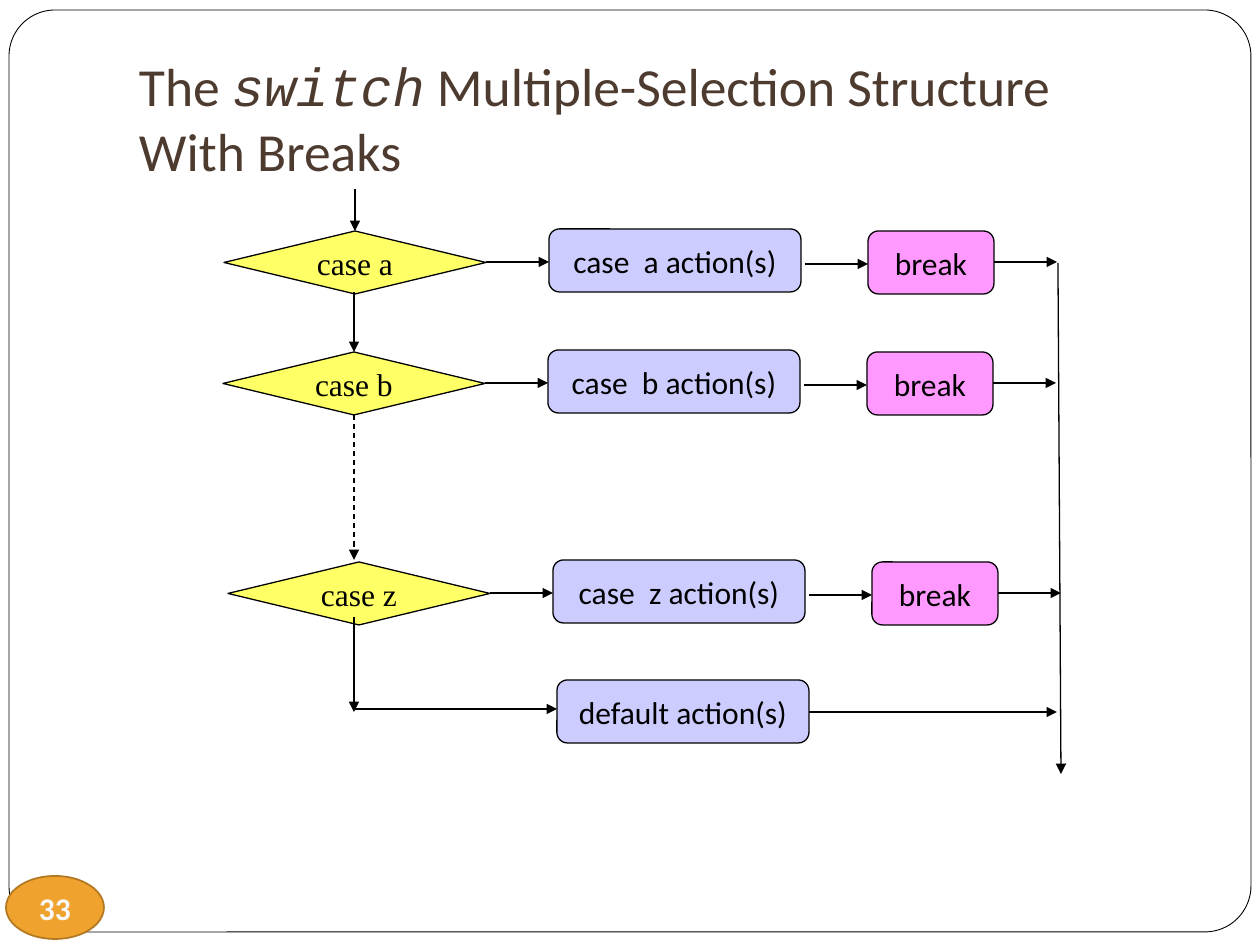
from dataclasses import dataclass

from lxml.etree import SubElement
from pptx import Presentation
from pptx.dml.color import RGBColor
from pptx.enum.dml import MSO_LINE
from pptx.enum.shapes import MSO_CONNECTOR, MSO_SHAPE
from pptx.enum.text import MSO_ANCHOR, MSO_AUTO_SIZE, PP_ALIGN
from pptx.oxml.ns import qn
from pptx.util import Emu, Pt


@dataclass(frozen=True)
class Theme:
    """Colours, fonts and type sizes of the deck."""

    paper: str = "FFFFFF"
    ink: str = "000000"
    heading: str = "4E3B30"
    badge: str = "F0A22E"
    badge_edge: str = "B27822"
    badge_text: str = "F8F8F8"
    decision: str = "FFFF66"
    action: str = "CCCCFF"
    leave: str = "FF99FF"
    sans: str = "Calibri"
    serif: str = "Times New Roman"
    code: str = "Courier New"
    title_size: float = 30.6
    label_size: float = 18
    frame_width: float = 0.5
    line_width: float = 0.75
    badge_width: float = 1


def px(length):
    """Turn pixels, 126 to the inch, into EMU."""
    return Emu(round(length * 914400 / 126))


class FlowPage:
    """Draws flowchart elements on one slide in one style."""

    def __init__(self, page, theme):
        """Keep the slide and its theme."""
        self.page = page
        self.theme = theme

    def style_span(self, span, font, size, color, bold=False, italic=False):
        """Format one run of text."""
        span.font.name = font
        span.font.size = Pt(size)
        span.font.color.rgb = RGBColor.from_string(color)
        span.font.bold = bold
        span.font.italic = italic

    def box(self, kind, bounds, fill, edge=None, width=None):
        """Add a filled and outlined preset shape."""
        shape = self.page.shapes.add_shape(kind, *map(px, bounds))
        shape.shadow.inherit = False
        shape.fill.solid()
        shape.fill.fore_color.rgb = RGBColor.from_string(fill)
        shape.line.color.rgb = RGBColor.from_string(edge or self.theme.ink)
        shape.line.width = Pt(width or self.theme.line_width)
        return shape

    def label(self, shape, text, font, color=None, bold=False):
        """Write centred text in a shape."""
        frame = shape.text_frame
        frame.text = text
        frame.word_wrap = False
        frame.vertical_anchor = MSO_ANCHOR.MIDDLE
        para = frame.paragraphs[0]
        para.alignment = PP_ALIGN.CENTER
        self.style_span(para.runs[0], font, self.theme.label_size,
                        color or self.theme.ink, bold)

    def decision(self, left, top, text):
        """Add a case diamond."""
        shape = self.box(MSO_SHAPE.DIAMOND, (left, top, 262, 63), self.theme.decision)
        self.label(shape, text, self.theme.serif)

    def step(self, left, top, width, text, fill):
        """Add a rounded step box."""
        shape = self.box(MSO_SHAPE.ROUNDED_RECTANGLE, (left, top, width, 63), fill)
        self.label(shape, text, self.theme.sans)

    def arrow(self, start_x, start_y, end_x, end_y, dashed=False):
        """Add a straight arrow."""
        line = self.page.shapes.add_connector(
            MSO_CONNECTOR.STRAIGHT, *map(px, (start_x, start_y, end_x, end_y)))
        line.line.color.rgb = RGBColor.from_string(self.theme.ink)
        line.line.width = Pt(self.theme.line_width)
        if dashed:
            line.line.dash_style = MSO_LINE.DASH
        properties = line.element.spPr
        SubElement(properties.find(qn("a:ln")), qn("a:tailEnd"), type="triangle")
        SubElement(properties, qn("a:effectLst"))

    def case_row(self, left, top, name):
        """Add a case with its action, its break and the arrows between."""
        self.decision(left, top, f"case {name}")
        self.step(left + 325, top - 2, 252, f"case  {name} action(s)", self.theme.action)
        self.step(left + 644, top, 126, "break", self.theme.leave)
        for offset, drop in ((262, 31), (581, 33), (770, 31)):
            self.arrow(left + offset, top + drop, left + offset + 63, top + drop)

    def backdrop(self, number):
        """Add the page frame and the slide number badge."""
        theme = self.theme
        frame = self.box(MSO_SHAPE.ROUNDED_RECTANGLE, (9, 10, 1242, 922),
                         theme.paper, width=theme.frame_width)
        frame.adjustments[0] = 0.05
        badge = self.box(MSO_SHAPE.OVAL, (6, 876, 98, 63),
                         theme.badge, theme.badge_edge, theme.badge_width)
        text = badge.text_frame
        text.margin_left = text.margin_right = text.margin_top = text.margin_bottom = 0
        self.label(badge, number, theme.sans, theme.badge_text, bold=True)

    def title(self, before, keyword, after, second_line):
        """Fill the title placeholder and bring it in front of the frame."""
        theme = self.theme
        title = self.page.shapes.title
        self.page.shapes.element.append(title.element)
        title.left, title.top, title.width, title.height = map(px, (126, 38, 1071, 157))
        frame = title.text_frame
        frame.word_wrap = True
        frame.auto_size = MSO_AUTO_SIZE.NONE
        frame.vertical_anchor = MSO_ANCHOR.BOTTOM
        frame.margin_left = frame.margin_right = frame.margin_bottom = px(13)
        frame.margin_top = px(6)
        para = frame.paragraphs[0]
        para.text = f"{before}"
        para.alignment = PP_ALIGN.LEFT
        para.add_run().text = keyword
        para.add_run().text = after
        para.add_line_break()
        para.add_run().text = second_line
        for span in para.runs:
            is_code = span.text == keyword
            self.style_span(span, theme.code if is_code else theme.sans,
                            theme.title_size, theme.heading, italic=is_code)


def main():
    """Build the switch flowchart slide."""
    deck = Presentation()
    deck.slide_width, deck.slide_height = px(1260), px(945)
    flow = FlowPage(deck.slides.add_slide(deck.slide_layouts[5]), Theme())
    flow.backdrop("33")
    flow.title("The ", "switch", " Multiple-Selection Structure", "With Breaks")

    for left, top, name in ((224, 231, "a"), (223, 352, "b"), (228, 562, "z")):
        flow.case_row(left, top, name)
    flow.step(557, 680, 252, "default action(s)", flow.theme.action)

    flow.arrow(355, 189, 355, 231)
    flow.arrow(354, 292, 354, 352)
    flow.arrow(354, 415, 354, 560, dashed=True)
    flow.arrow(354, 617, 354, 712)
    flow.arrow(354, 709, 557, 709)
    flow.arrow(809, 712, 1057, 712)
    flow.arrow(1058, 263, 1061, 774)
    deck.save("out.pptx")


if __name__ == "__main__":
    main()
